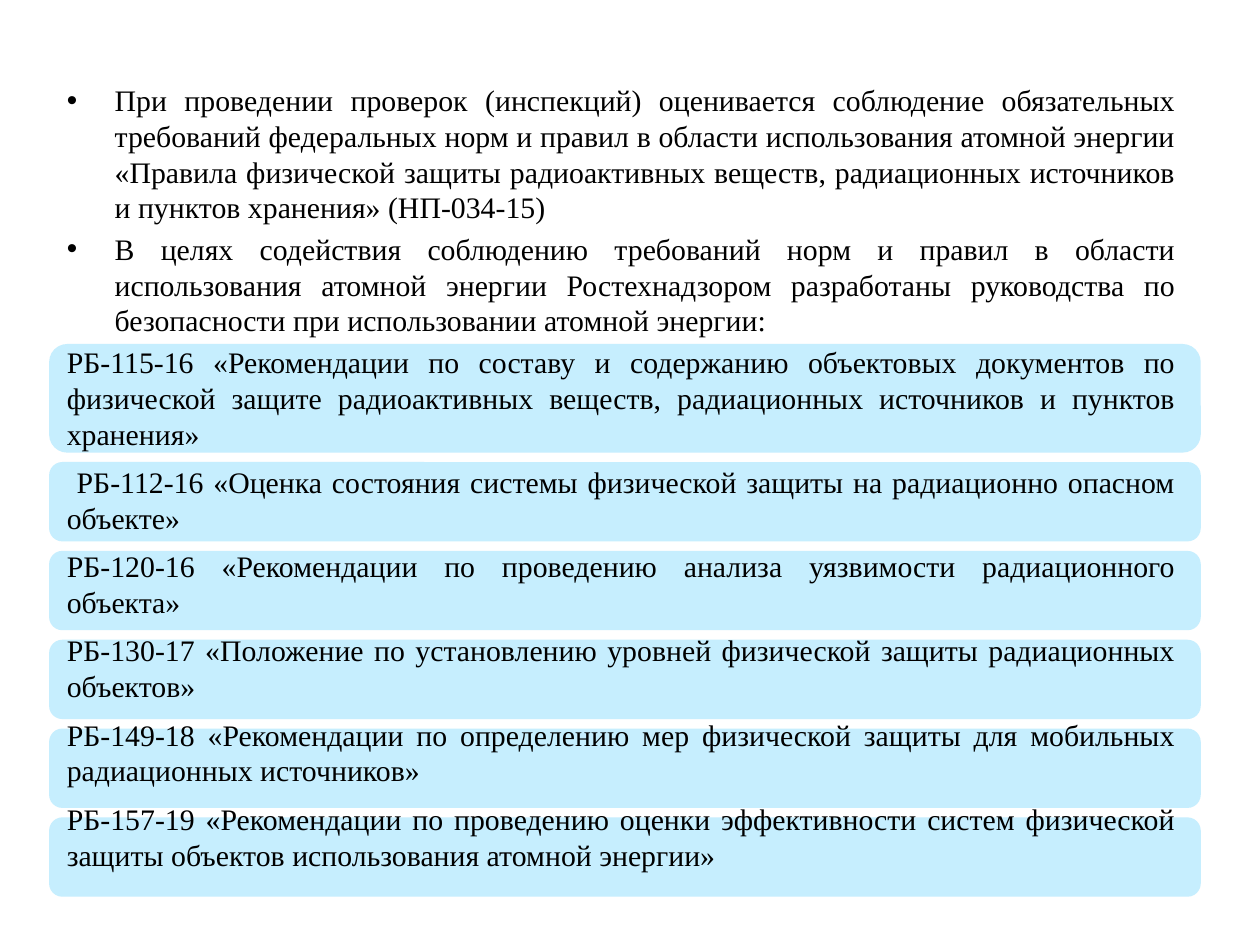
from dataclasses import dataclass

from lxml.etree import SubElement
from pptx import Presentation
from pptx.dml.color import RGBColor
from pptx.enum.shapes import MSO_SHAPE as Shape
from pptx.enum.text import MSO_ANCHOR as Anchor, MSO_AUTO_SIZE as AutoSize, PP_ALIGN as Align
from pptx.oxml.ns import qn
from pptx.util import Inches, Pt


@dataclass(frozen=True)
class Theme:
    font: str = "Times New Roman"
    size: float = 17
    ink: RGBColor = RGBColor(0, 0, 0)
    bar: RGBColor = RGBColor(0xC6, 0xEE, 0xFE)
    leading: float = 1.0
    tight: float = 3.4
    loose: float = 7.3
    indent: float = 0.38


@dataclass(frozen=True)
class Entry:
    text: str
    bullet: bool = False
    loose: bool = False


@dataclass(frozen=True)
class BarStack:
    left: float = 0.039
    top: float = 0.364
    width: float = 0.914
    gap: float = 0.01
    heights: tuple = (0.115,) + (0.084,) * 5


THEME = Theme()
WIDTH, HEIGHT = Inches(10), Inches(7.5)
ENTRIES = (
    Entry("При проведении проверок (инспекций) оценивается соблюдение обязательных требований "
          "федеральных норм и правил в области использования атомной энергии «Правила физической "
          "защиты радиоактивных веществ, радиационных источников и пунктов хранения» (НП-034-15)",
          bullet=True),
    Entry("В целях содействия соблюдению требований норм и правил в области использования атомной "
          "энергии Ростехнадзором разработаны руководства по безопасности при использовании "
          "атомной энергии:", bullet=True),
    Entry("РБ-115-16 «Рекомендации по составу и содержанию объектовых документов по физической "
          "защите радиоактивных веществ, радиационных источников и пунктов хранения»"),
    Entry(" РБ-112-16 «Оценка состояния системы физической защиты на радиационно опасном объекте»",
          loose=True),
    Entry("РБ-120-16 «Рекомендации по проведению анализа уязвимости радиационного объекта»",
          loose=True),
    Entry("РБ-130-17 «Положение по установлению уровней физической защиты радиационных объектов»",
          loose=True),
    Entry("РБ-149-18 «Рекомендации по определению мер физической защиты для мобильных "
          "радиационных источников»", loose=True),
    Entry("РБ-157-19 «Рекомендации по проведению оценки эффективности систем физической защиты "
          "объектов использования атомной энергии»", loose=True),
)


def apply(target, values: dict) -> None:
    for name, value in values.items():
        setattr(target, name, value)


def draw_bars(page, stack: BarStack) -> None:
    top = stack.top
    for height in stack.heights:
        bar = page.shapes.add_shape(
            Shape.ROUNDED_RECTANGLE, int(WIDTH * stack.left), int(HEIGHT * top),
            int(WIDTH * stack.width), int(HEIGHT * height))
        bar.shadow.inherit = False
        bar.fill.solid()
        bar.fill.fore_color.rgb = THEME.bar
        bar.line.fill.background()
        top += height + stack.gap


def set_bullet(para, shown: bool) -> None:
    props = para._p.get_or_add_pPr()
    indent = Inches(THEME.indent) if shown else 0
    props.set("marL", str(indent))
    props.set("indent", str(-indent))
    if shown:
        SubElement(props, qn("a:buFont"), typeface="Arial")
        SubElement(props, qn("a:buChar"), char="•")
    else:
        SubElement(props, qn("a:buNone"))


def write_entry(para, entry: Entry) -> None:
    apply(para, {
        "alignment": Align.JUSTIFY,
        "line_spacing": THEME.leading,
        "space_before": Pt(THEME.loose if entry.loose else THEME.tight),
        "space_after": Pt(0),
    })
    set_bullet(para, entry.bullet)
    span = para.add_run()
    span.text = entry.text
    apply(span.font, {"name": THEME.font, "size": Pt(THEME.size)})
    span.font.color.rgb = THEME.ink


def fill_body(page, entries: tuple) -> None:
    body = page.placeholders[1]
    apply(body, {"left": Inches(0.43), "top": Inches(0.6),
                 "width": Inches(9), "height": Inches(6.62)})
    frame = body.text_frame
    apply(frame, {"word_wrap": True, "auto_size": AutoSize.NONE, "vertical_anchor": Anchor.TOP})
    for index, entry in enumerate(entries):
        write_entry(frame.add_paragraph() if index else frame.paragraphs[0], entry)
    body.element.getparent().append(body.element)


def main() -> None:
    deck = Presentation()
    apply(deck, {"slide_width": WIDTH, "slide_height": HEIGHT})
    page = deck.slides.add_slide(deck.slide_layouts[1])
    title = page.shapes.title.element
    title.getparent().remove(title)
    draw_bars(page, BarStack())
    fill_body(page, ENTRIES)
    deck.save("out.pptx")


if __name__ == "__main__":
    main()
